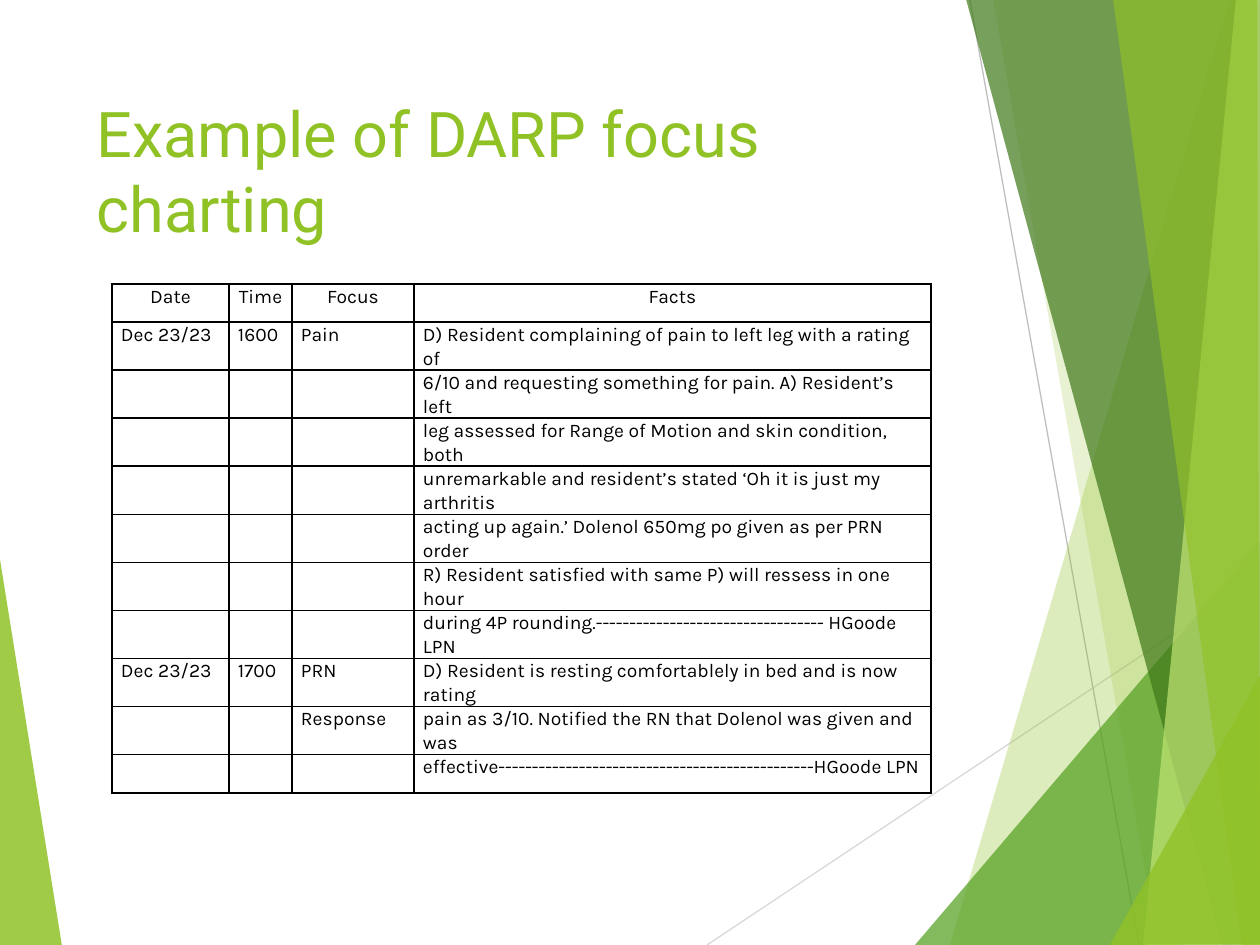
"""Build the DARP focus charting slide."""
import pptx
import pptx.dml.color
import pptx.enum.shapes
import pptx.enum.text
import pptx.oxml
import pptx.oxml.ns
import pptx.util

PX = 914400 / 126
RGBColor = pptx.dml.color.RGBColor
ALIGN = pptx.enum.text.PP_ALIGN
ANCHOR = pptx.enum.text.MSO_ANCHOR
LIME = RGBColor(0x90, 0xC2, 0x26)
GREEN = RGBColor(0x54, 0xA0, 0x21)
DARK_GREEN = RGBColor(0x3F, 0x78, 0x19)
PALE_LIME = RGBColor(0xC0, 0xE4, 0x74)
LIGHT_GRAY = RGBColor(0xD9, 0xD9, 0xD9)
GRAY = RGBColor(0xBF, 0xBF, 0xBF)
BLACK = RGBColor(0, 0, 0)

LEFT_FACET = ([(-1, 553), (62, 946), (-1, 945)], LIME, 85)
RAYS = [
    ((707, 945), (1261, 576), LIGHT_GRAY),
    ((970, 0), (1139, 945), GRAY),
]
RIGHT_FACETS = [
    ([(1229, 0), (950, 945), (1263, 946), (1261, 1)], LIME, 30),
    ([(993, -1), (1158, 945), (1261, 945), (1261, -1)], LIME, 20),
    ([(915, 945), (1260, 541), (1261, 945)], GREEN, 72),
    ([(966, -1), (1222, 945), (1261, 944), (1261, -1)], DARK_GREEN, 70),
    ([(1236, -1), (1143, 945), (1261, 945), (1260, -1)], PALE_LIME, 70),
    ([(1113, -1), (1242, 945), (1260, 945), (1257, -1)], LIME, 65),
    ([(1110, 945), (1261, 674), (1261, 944)], LIME, 80),
]
COLUMN_WIDTHS = [117, 63, 122, 517]
ROW_HEIGHT = 38
CHART_ROWS = [
    ("Date", "Time", "Focus", "Facts"),
    ("Dec 23/23", "1600", "Pain", "D) Resident complaining of pain to left leg with a rating of"),
    ("", "", "", "6/10 and requesting something for pain. A) Resident’s left"),
    ("", "", "", "leg assessed for Range of Motion and skin condition, both"),
    ("", "", "", "unremarkable and resident’s stated ‘Oh it is just my arthritis"),
    ("", "", "", "acting up again.’ Dolenol 650mg po given as per PRN order"),
    ("", "", "", "R) Resident satisfied with same P) will ressess in one hour"),
    ("", "", "", "during 4P rounding.---------------------------------- HGoode LPN"),
    ("Dec 23/23", "1700", "PRN", "D) Resident is resting comfortablely in bed and is now rating"),
    ("", "", "Response", "pain as 3/10. Notified the RN that Dolenol was given and was"),
    ("", "", "", "effective-----------------------------------------------HGoode LPN"),
]


def px(length):
    return pptx.util.Emu(round(length * PX))


def set_attributes(target, values):
    for name, value in values.items():
        setattr(target, name, value)


def write_text(paragraph, text, font_name, size, color, **paragraph_format):
    run = paragraph.add_run()
    run.text = text
    set_attributes(run.font, {"name": font_name, "size": pptx.util.Pt(size)})
    run.font.color.rgb = color
    set_attributes(paragraph, paragraph_format)


def add_facet(slide, points, color, opacity):
    corners = [(px(x), px(y)) for x, y in points]
    builder = slide.shapes.build_freeform(*corners[0])
    builder.add_line_segments(corners[1:], close=True)
    shape = builder.convert_to_shape()
    shape.shadow.inherit = False
    shape.line.fill.background()
    shape.fill.solid()
    shape.fill.fore_color.rgb = color
    color_element = shape.element.spPr.find(".//" + pptx.oxml.ns.qn("a:srgbClr"))
    color_element.append(pptx.oxml.parse_xml(
        f'<a:alpha {pptx.oxml.ns.nsdecls("a")} val="{opacity * 1000}"/>'))


def add_ray(slide, start, end, color):
    connector = slide.shapes.add_connector(
        pptx.enum.shapes.MSO_CONNECTOR.STRAIGHT, *map(px, start + end))
    connector.line.width = pptx.util.Pt(0.75)
    connector.line.color.rgb = color
    connector.element.spPr.append(pptx.oxml.parse_xml(
        f'<a:effectLst {pptx.oxml.ns.nsdecls("a")}/>'))


def add_title(slide, text):
    title = slide.shapes.title
    set_attributes(title, {"left": px(84), "top": px(84), "width": px(874), "height": px(181)})
    set_attributes(title.text_frame, {
        "vertical_anchor": ANCHOR.TOP, "word_wrap": True, "margin_top": px(11),
        "auto_size": pptx.enum.text.MSO_AUTO_SIZE.NONE})
    write_text(title.text_frame.paragraphs[0], text, "Roboto", 36, LIME,
               alignment=ALIGN.LEFT, line_spacing=pptx.util.Pt(43))
    title.element.getparent().append(title.element)


def add_borders(cell):
    properties = cell._tc.get_or_add_tcPr()
    for side in "LRTB":
        properties.append(pptx.oxml.parse_xml(
            f'<a:ln{side} {pptx.oxml.ns.nsdecls("a")} w="12700">'
            f'<a:solidFill><a:srgbClr val="{BLACK}"/></a:solidFill></a:ln{side}>'))


def add_chart_table(slide):
    table = slide.shapes.add_table(
        len(CHART_ROWS), len(COLUMN_WIDTHS), px(112), px(284),
        px(sum(COLUMN_WIDTHS)), px(ROW_HEIGHT * len(CHART_ROWS))).table
    set_attributes(table, {"first_row": False, "horz_banding": False})
    for column, width in zip(table.columns, COLUMN_WIDTHS):
        column.width = px(width)
    for row_index, texts in enumerate(CHART_ROWS):
        table.rows[row_index].height = px(ROW_HEIGHT)
        alignment = ALIGN.LEFT if row_index else ALIGN.CENTER
        for cell, text in zip(table.rows[row_index].cells, texts):
            set_attributes(cell, {"margin_left": px(9), "margin_right": px(9),
                                  "margin_top": 0, "margin_bottom": 0})
            add_borders(cell)
            cell.fill.background()
            if text:
                write_text(cell.text_frame.paragraphs[0], text, "Karla", 11, BLACK,
                           alignment=alignment, line_spacing=1.07,
                           space_after=pptx.util.Pt(8))


def main():
    presentation = pptx.Presentation()
    set_attributes(presentation, {"slide_width": px(1260), "slide_height": px(945)})
    slide = presentation.slides.add_slide(presentation.slide_layouts[5])
    add_facet(slide, *LEFT_FACET)
    for ray in RAYS:
        add_ray(slide, *ray)
    for facet in RIGHT_FACETS:
        add_facet(slide, *facet)
    add_title(slide, "Example of DARP focus charting")
    add_chart_table(slide)
    presentation.save("out.pptx")


if __name__ == "__main__":
    main()
